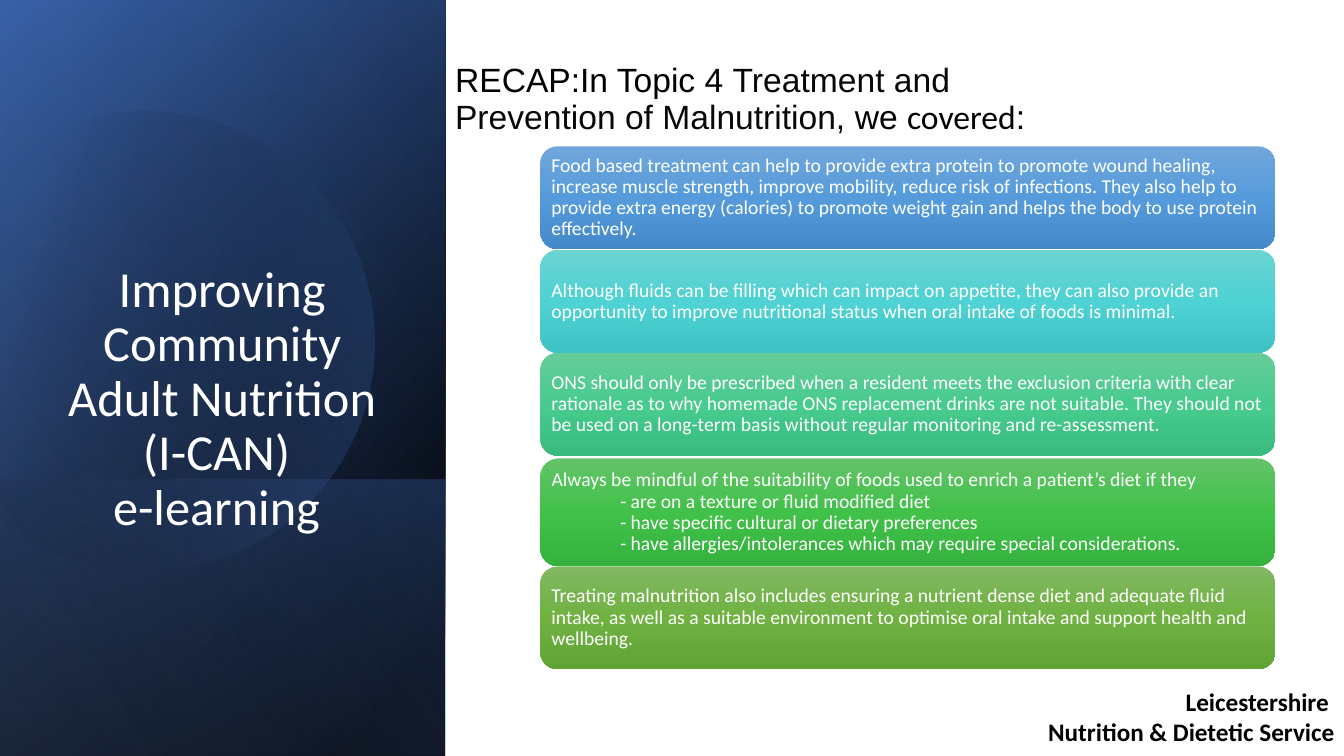
import math

import pptx
import pptx.chart.data
import pptx.dml.color
import pptx.enum.shapes
import pptx.enum.text
import pptx.oxml
import pptx.oxml.ns
import pptx.util

Pt = pptx.util.Pt
Align = pptx.enum.text.PP_ALIGN
Anchor = pptx.enum.text.MSO_ANCHOR
Preset = pptx.enum.shapes.MSO_SHAPE

SIDE_W, SLIDE_H = 318, 540
CARD_X, CARD_W, CARD_H = 386, 525, 73.4

# Top, height, gradient colours and lines of each card
CARDS = [
    (104.5, CARD_H, ("71A6DB", "559BDB", "448ACA"),
     ["Food based treatment can help to provide extra protein to promote wound healing, "
      "increase muscle strength, improve mobility, reduce risk of infections. They also "
      "help to provide extra energy (calories) to promote weight gain and helps the body "
      "to use protein effectively."]),
    (178.5, CARD_H, ("6CD3D3", "4ED2D3", "3EC2C3"),
     ["Although fluids can be filling which can impact on appetite, they can also provide "
      "an opportunity to improve nutritional status when oral intake of foods is minimal."]),
    (252, CARD_H, ("67CC9A", "47CB8E", "39BB7F"),
     ["ONS should only be prescribed when a resident meets the exclusion criteria with "
      "clear rationale as to why homemade ONS replacement drinks are not suitable. They "
      "should not be used on a long-term basis without regular monitoring and "
      "re-assessment."]),
    (327.5, 77, ("63C368", "42C14A", "34B23D"),
     ["Always be mindful of the suitability of foods used to enrich a patient’s diet if they",
      "- are on a texture or fluid modified diet",
      "- have specific cultural or dietary preferences",
      "- have allergies/intolerances which may require special considerations."]),
    (404.6, CARD_H, ("81B861", "6FB242", "62A336"),
     ["Treating malnutrition also includes ensuring a nutrient dense diet and adequate "
      "fluid intake, as well as a suitable environment to optimise oral intake and support "
      "health and wellbeing."]),
]

# Top, gradient stops (place, colour, opacity) and angle of each side panel
PANELS = [
    (0, [(8, "000000", 100), (100, "2F5597", 100)], 50),
    (0, [(0, "000000", 0), (99, "4472C4", 46)], 30),
    (342.7, [(2, "4472C4", 29), (100, "000000", 30)], 130),
]
GLOW = (0, [(0, "000000", 0), (99, "8FAADC", 11)], 120)

# Disc outline: a start, then end points with optional curve handles
DISC = [
    [(107, 79)],
    [(177, 81), (241, 127), (261, 198)],
    [(287, 286), (236, 377), (149, 402)],
    [(94, 418), (38, 404), (-2, 370)],
    [(-11, 362)],
    [(-11, 126)],
    [(0, 116)],
    [(17, 102), (36, 92), (58, 86)],
    [(74, 81), (91, 79), (107, 79)],
]
DISC_MID = (114, 241)
DISC_TURN = 343.9


def color(text):
    return pptx.dml.color.RGBColor.from_string(text)


def shade(shape, stops, angle):
    """Fill with a gradient whose angle runs clockwise, without line or shadow."""
    shape.shadow.inherit = False
    shape.line.fill.background()
    marks = "".join(
        f'<a:gs pos="{place * 1000}"><a:srgbClr val="{tint}">'
        f'<a:alpha val="{alpha * 1000}"/></a:srgbClr></a:gs>'
        for place, tint, alpha in stops)
    fill = pptx.oxml.parse_xml(
        f'<a:gradFill {pptx.oxml.ns.nsdecls("a")}><a:gsLst>{marks}</a:gsLst>'
        f'<a:lin ang="{angle * 60000}" scaled="0"/></a:gradFill>')
    shape.fill.background()
    props = shape.element.spPr
    blank = props.find(pptx.oxml.ns.qn("a:noFill"))
    props.replace(blank, fill)


def add_panel(slide, top, stops, angle):
    """Add a side panel from top to the slide's foot, turned by 90 degrees."""
    size = SLIDE_H - top
    mid = top + size / 2
    panel = slide.shapes.add_shape(
        Preset.RECTANGLE, Pt((SIDE_W - size) / 2), Pt(mid - SIDE_W / 2),
        Pt(size), Pt(SIDE_W))
    panel.rotation = 90
    panel.element.spPr.find(pptx.oxml.ns.qn("a:xfrm")).set("flipH", "1")
    shade(panel, stops, angle)


def trace(parts, steps=16):
    """Give points along lines and cubic curves."""
    points = list(parts[0])
    for part in parts[1:]:
        if len(part) == 1:
            points += part
            continue
        knots = [points[-1], *part]
        for step in range(1, steps + 1):
            t = step / steps
            bias = [math.comb(3, i) * t**i * (1 - t)**(3 - i) for i in range(4)]
            points.append(tuple(
                sum(b * knot[axis] for b, knot in zip(bias, knots)) for axis in (0, 1)))
    return points


def turn(point, angle):
    """Turn a point clockwise about the disc's middle."""
    mid_x, mid_y = DISC_MID
    x, y = point[0] - mid_x, point[1] - mid_y
    sin, cos = math.sin(math.radians(angle)), math.cos(math.radians(angle))
    return Pt(mid_x + x * cos - y * sin), Pt(mid_y + x * sin + y * cos)


def add_disc(slide):
    start, *rest = [turn(point, -DISC_TURN) for point in trace(DISC)]
    pen = slide.shapes.build_freeform(*start)
    pen.add_line_segments(rest, close=True)
    disc = pen.convert_to_shape()
    disc.rotation = DISC_TURN
    shade(disc, [(29, "000000", 0), (100, "4472C4", 43)], 30)


def style(run, size, tint, face="Calibri", bold=False):
    run.font.size = Pt(size)
    run.font.name = face
    run.font.bold = bold
    run.font.color.rgb = color(tint)


def set_text(shape, lines, size, tint, align=Align.LEFT, space=0.9, bold=False):
    frame = shape.text_frame
    frame.word_wrap = True
    frame.text = "\n".join(lines)
    for para in frame.paragraphs:
        para.alignment = align
        para.line_spacing = space
        for run in para.runs:
            style(run, size, tint, bold=bold)
    return frame


def add_box(slide, left, top, width, height):
    return slide.shapes.add_textbox(Pt(left), Pt(top), Pt(width), Pt(height))


def add_card(slide, top, height, tints, lines):
    card = slide.shapes.add_shape(
        Preset.ROUNDED_RECTANGLE, Pt(CARD_X), Pt(top), Pt(CARD_W), Pt(height))
    shade(card, [(50 * i, tint, 100) for i, tint in enumerate(tints)], 90)
    frame = set_text(card, lines, 14, "FFFFFF")
    frame.vertical_anchor = Anchor.MIDDLE
    frame.margin_left = frame.margin_right = Pt(4.3)
    frame.margin_top = frame.margin_bottom = Pt(4.3)
    for para in frame.paragraphs[1:]:
        props = para._p.get_or_add_pPr()
        props.set("marL", str(Pt(49)))
        props.set("indent", "0")


def add_recap(slide):
    frame = add_box(slide, 318, 33, 431, 68).text_frame
    frame.word_wrap = True
    frame.vertical_anchor = Anchor.BOTTOM
    para = frame.paragraphs[0]
    para.line_spacing = 0.9
    for text, tint, face in [
            ("RECAP:In Topic 4 ", "000000", "Arial"),
            ("Treatment and Prevention of Malnutrition, ", "080808", "Arial"),
            ("we ", "000000", "Arial"),
            ("covered", "000000", "Calibri"),
            (":", "000000", "Arial")]:
        run = para.add_run()
        run.text = text
        style(run, 24, tint, face)


def main():
    deck = pptx.Presentation()
    deck.slide_width, deck.slide_height = Pt(960), Pt(SLIDE_H)
    slide = deck.slides.add_slide(deck.slide_layouts[6])
    for panel in PANELS:
        add_panel(slide, *panel)
    add_disc(slide)
    add_panel(slide, *GLOW)
    title = add_box(slide, 36, 155.5, 245.5, 231)
    frame = set_text(title, ["Improving Community Adult Nutrition (I-CAN) \ve-learning "],
                     36, "FFFFFF", Align.CENTER)
    frame.vertical_anchor = Anchor.BOTTOM
    for card in CARDS:
        add_card(slide, *card)
    add_recap(slide)
    set_text(add_box(slide, 368, 486.7, 592.5, 51),
             ["Leicestershire ", "Nutrition & Dietetic Service"],
             18, "000000", Align.RIGHT, 1.0, True)
    deck.save("out.pptx")


if __name__ == "__main__":
    main()
